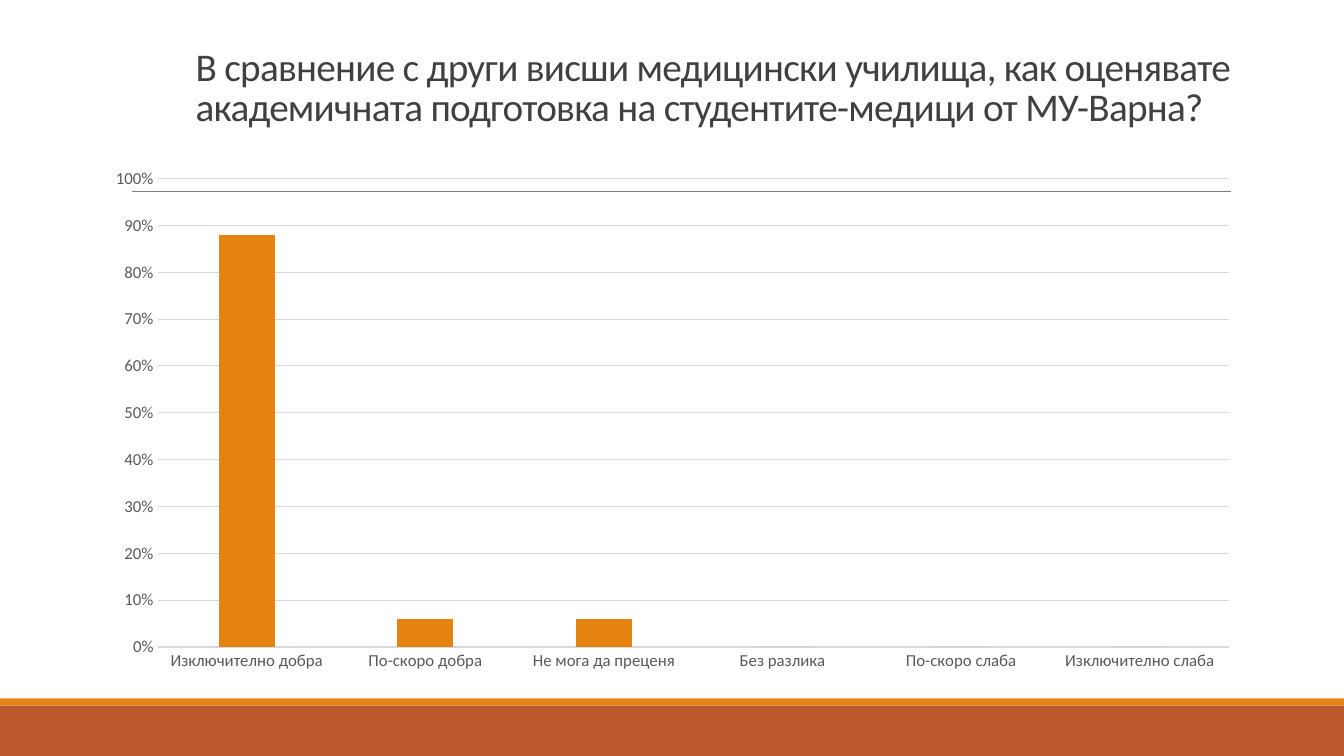
"""Builds a survey slide with a column chart of how respondents rate academic training."""
from lxml import etree
from pptx import Presentation
from pptx.chart.data import CategoryChartData
from pptx.dml.color import RGBColor
from pptx.enum.chart import XL_CHART_TYPE as ChartType, XL_TICK_MARK as TickMark
from pptx.enum.shapes import MSO_CONNECTOR as Connector, MSO_SHAPE as Shape
from pptx.enum.text import MSO_ANCHOR as Anchor, MSO_AUTO_SIZE as AutoSize, PP_ALIGN as Align
from pptx.oxml.ns import qn
from pptx.util import Inches, Pt


def color(hex_code):
    return RGBColor.from_string(hex_code)


def style_font(font, size, hex_code):
    font.name = "Calibri"
    font.size = Pt(size)
    font.color.rgb = color(hex_code)


prs = Presentation()
prs.slide_width = Inches(13.33)
prs.slide_height = Inches(7.5)
slide = prs.slides.add_slide(prs.slide_layouts[5])

for top, height, fill in [(7, 0.5, "BD582C"), (6.93, 0.07, "E48312")]:
    band = slide.shapes.add_shape(
        Shape.RECTANGLE, 0, Inches(top), prs.slide_width, Inches(height))
    band.shadow.inherit = False
    band.fill.solid()
    band.fill.fore_color.rgb = color(fill)
    band.line.fill.background()

divider = slide.shapes.add_connector(
    Connector.STRAIGHT, Inches(1.31), Inches(1.9), Inches(12.21), Inches(1.9))
divider.line.color.rgb = color("808080")
divider.line.width = Pt(0.5)
etree.SubElement(divider._element.spPr, qn("a:effectLst"))

question = slide.shapes.title
question.left, question.top = Inches(1.84), Inches(0.15)
question.width, question.height = Inches(10.58), Inches(1.19)
question_frame = question.text_frame
question_frame.text = ("В сравнение с други висши медицински училища, как оценявате "
                       "академичната подготовка на студентите-медици от МУ-Варна?")
question_frame.word_wrap = True
question_frame.auto_size = AutoSize.NONE
question_frame.vertical_anchor = Anchor.BOTTOM
question_line = question_frame.paragraphs[0]
question_line.alignment = Align.LEFT
question_line.line_spacing = 0.85
style_font(question_line.font, 28, "404040")
question_line.runs[0]._r.get_or_add_rPr().set("spc", "-50")

ratings = CategoryChartData(number_format="0%")
ratings.categories = ["Изключително добра", "По-скоро добра", "Не мога да преценя",
                      "Без разлика", "По-скоро слаба", "Изключително слаба"]
ratings.add_series("Series 1", [0.88, 0.06, 0.06, 0, 0, 0])
chart = slide.shapes.add_chart(
    ChartType.COLUMN_CLUSTERED, Inches(0.92), Inches(1.57),
    Inches(11.5), Inches(5.19), ratings).chart
chart.has_title = False
chart.has_legend = False
style_font(chart.font, 10, "000000")

columns = chart.plots[0]
columns.vary_by_categories = False
columns.gap_width = 219
columns.overlap = -27
columns.series[0].format.fill.solid()
columns.series[0].format.fill.fore_color.rgb = color("E48312")

answer_axis, share_axis = chart.category_axis, chart.value_axis
for axis in (answer_axis, share_axis):
    axis.major_tick_mark = TickMark.NONE
    axis.minor_tick_mark = TickMark.NONE
    style_font(axis.tick_labels.font, 12, "595959")

share_axis.minimum_scale, share_axis.maximum_scale = 0, 1
share_axis.major_unit = 0.1
share_axis.tick_labels.number_format = "0%"
share_axis.tick_labels.number_format_is_linked = False
share_axis.format.line.fill.background()
for rule in (answer_axis.format.line, share_axis.major_gridlines.format.line):
    rule.color.rgb = color("D9D9D9")
    rule.width = Pt(0.75)

prs.save("out.pptx")
